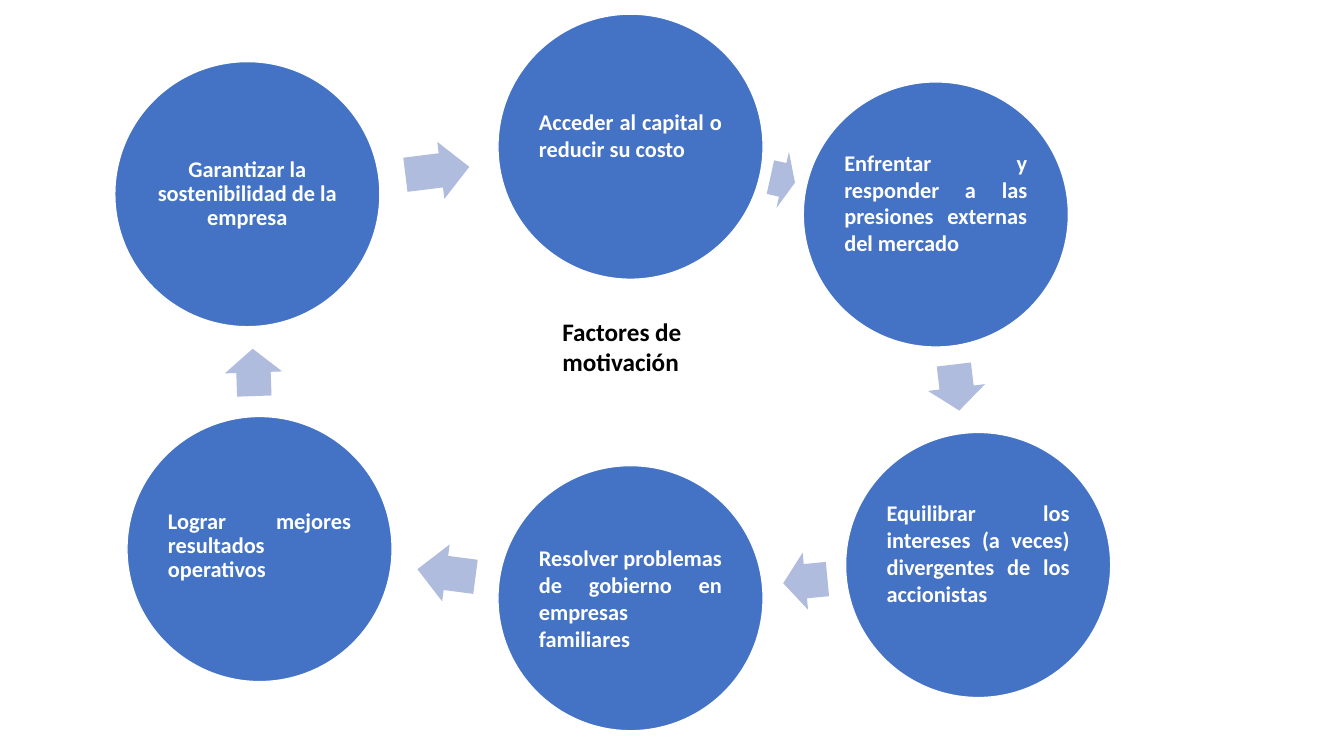
from pptx import Presentation
from pptx.dml.color import RGBColor
from pptx.enum.shapes import MSO_SHAPE as Shape
from pptx.enum.text import MSO_ANCHOR as Anchor, MSO_AUTO_SIZE as AutoSize, PP_ALIGN as Align
from pptx.util import Pt

DIAMETER = 189.4
ARROW_HEIGHT = 41
LIFT = 17  # extra bottom inset that raises a factor's text

# text, left, top, alignment, line spacing, extra bottom inset
FACTORS = [
    ("Acceder al capital o reducir su costo", 355.7, 10.1, Align.JUSTIFY, 1.0, LIFT),
    ("Enfrentar y responder a las presiones externas del mercado",
     573.8, 58.5, Align.JUSTIFY, 1.0, LIFT),
    ("Equilibrar los intereses (a veces) divergentes de los accionistas",
     604, 308.9, Align.JUSTIFY, 1.0, LIFT),
    ("Resolver problemas de gobierno en empresas familiares",
     355.7, 332.6, Align.JUSTIFY, 1.0, 0),
    ("Lograr mejores resultados operativos", 90.7, 297.5, Align.JUSTIFY, 0.9, 4),
    ("Garantizar la sostenibilidad de la empresa", 82, 44, Align.CENTER, 0.9, 0),
]

# left, top, width, rotation
ARROWS = [
    (550.1, 108, 18, 12.5),
    (666.7, 256.3, 33.1, 83.2),
    (559.4, 394.6, 31.7, 174.6),
    (298, 388.8, 41.8, 187.5),
    (164.2, 245.5, 33.8, 268),
    (289.4, 101.5, 46, 352.9),
]


def color(value):
    return RGBColor.from_string(value)


class CycleSlide:
    font = "Calibri"
    circle_fill = "4472C4"
    arrow_fill = "B0BCDE"
    light = "FFFFFF"
    dark = "000000"

    def __init__(self, slide):
        self.shapes = slide.shapes

    def solid(self, kind, left, top, width, height, fill):
        shape = self.shapes.add_shape(kind, Pt(left), Pt(top), Pt(width), Pt(height))
        shape.shadow.inherit = False
        shape.fill.solid()
        shape.fill.fore_color.rgb = color(fill)
        return shape

    def set_text(self, frame, text, size, ink, align, spacing=1.0):
        frame.word_wrap = True
        frame.text = text
        paragraph = frame.paragraphs[0]
        paragraph.alignment = align
        paragraph.line_spacing = spacing
        font = paragraph.font
        font.name, font.size, font.bold = self.font, Pt(size), True
        font.color.rgb = color(ink)

    def factor(self, text, left, top, align, spacing, lift):
        circle = self.solid(Shape.OVAL, left, top, DIAMETER, DIAMETER, self.circle_fill)
        circle.line.color.rgb = color(self.light)
        circle.line.width = Pt(1)
        frame = circle.text_frame
        frame.vertical_anchor = Anchor.MIDDLE
        frame.margin_left = frame.margin_right = frame.margin_top = Pt(1.6)
        frame.margin_bottom = Pt(1.6 + lift)
        self.set_text(frame, text, 16, self.light, align, spacing)

    def arrow(self, left, top, width, rotation):
        arrow = self.solid(Shape.RIGHT_ARROW, left, top, width, ARROW_HEIGHT, self.arrow_fill)
        arrow.line.fill.background()
        arrow.adjustments[0], arrow.adjustments[1] = 0.6, 0.5
        arrow.rotation = rotation

    def center_title(self, text, left, top, width, height):
        title = self.shapes.add_textbox(Pt(left), Pt(top), Pt(width), Pt(height))
        self.set_text(title.text_frame, text, 18, self.dark, Align.LEFT)
        title.text_frame.auto_size = AutoSize.SHAPE_TO_FIT_TEXT


def main():
    deck = Presentation()
    deck.slide_width, deck.slide_height = Pt(960), Pt(540)
    cycle = CycleSlide(deck.slides.add_slide(deck.slide_layouts[6]))
    for factor, arrow in zip(FACTORS, ARROWS):
        cycle.factor(*factor)
        cycle.arrow(*arrow)
    cycle.center_title("Factores de motivación", 394.6, 222.5, 141.8, 51)
    deck.save("out.pptx")


if __name__ == "__main__":
    main()
